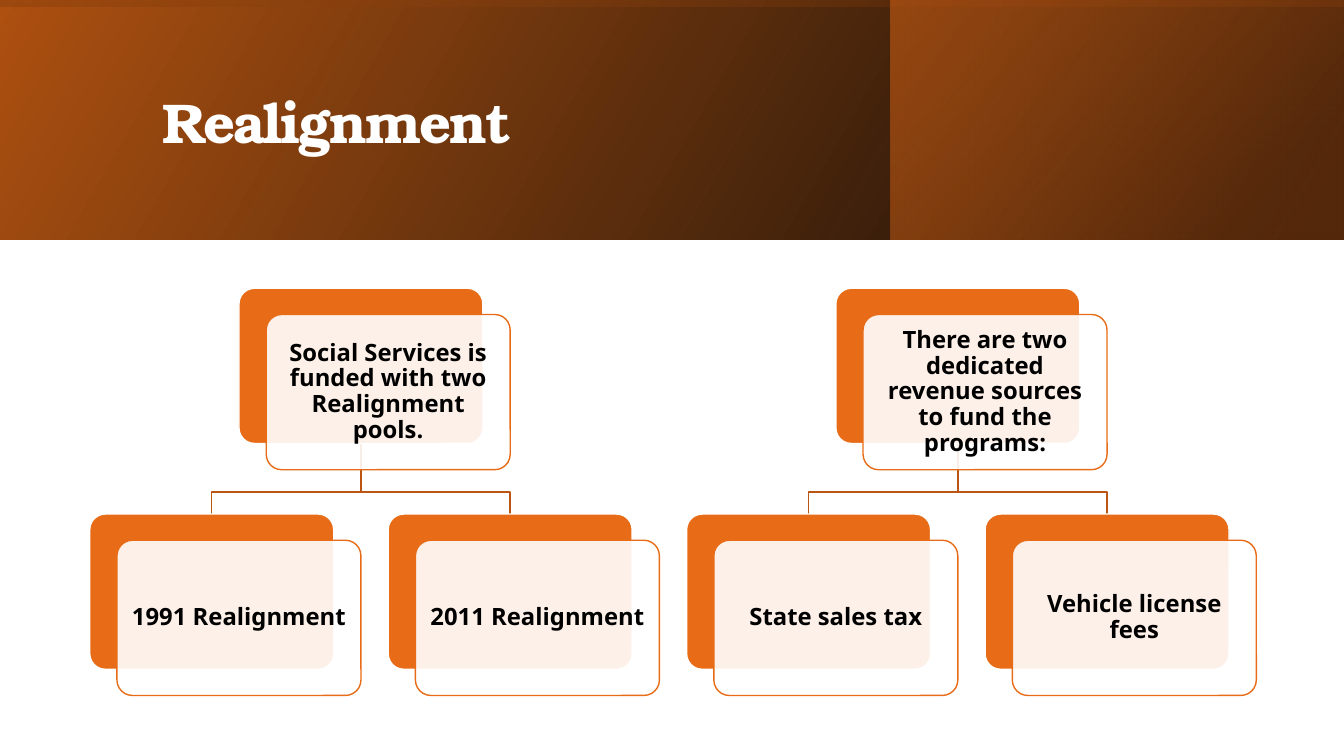
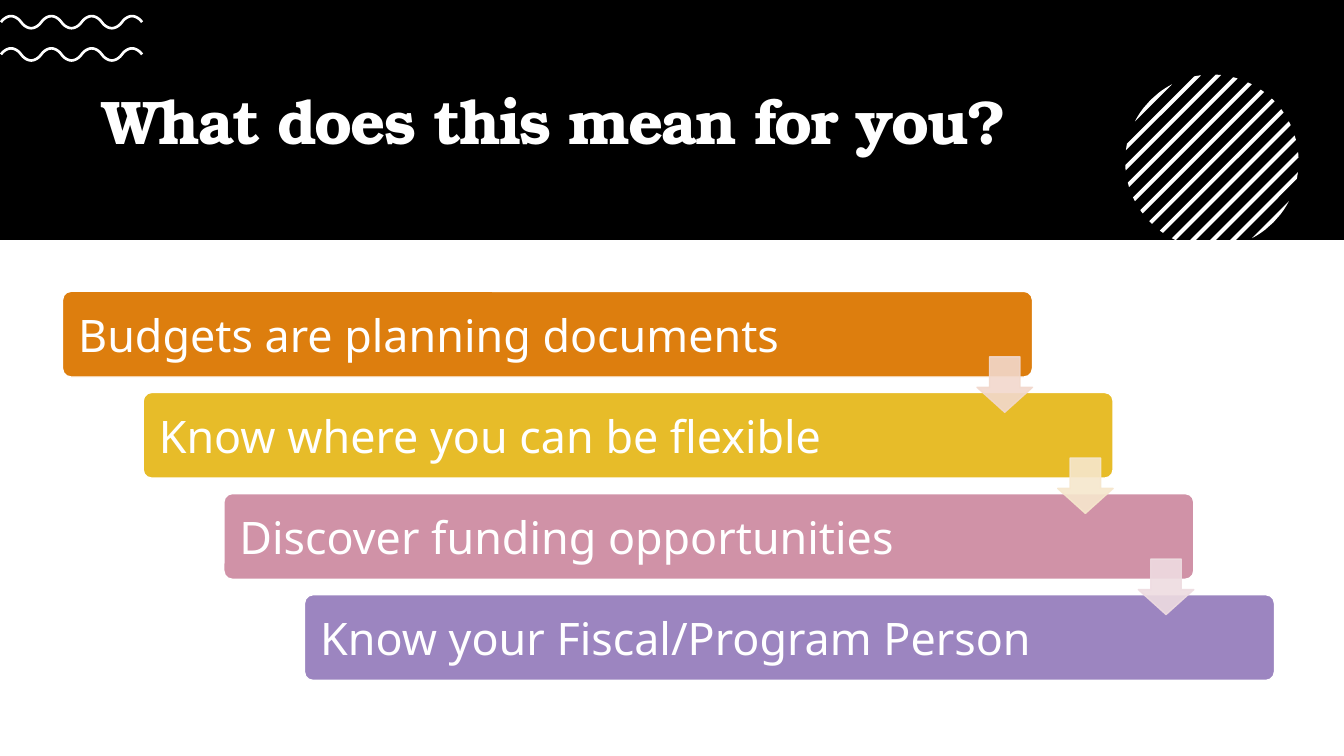
import math
from dataclasses import dataclass

from pptx import Presentation
from pptx.dml.color import RGBColor
from pptx.enum import shapes as es, text as et
from pptx.oxml.ns import qn
from pptx.util import Inches, Pt
from lxml import etree

COLORS = {
    "white": "FFFFFF", "black": "000000", "orange": "E86C17", "rust": "AE5111",
    "brown": "74360C", "branch": "BA5612", "amber": "DD7E0E", "gold": "E7BC29",
    "pink": "D092A7", "purple": "9C85C0", "peach": "F2D8CC", "cream": "F6E7CD",
    "blush": "EEDCE1",
}
TITLE_FONT, BODY_FONT = "TeX Gyre Bonum", "Noto Sans"
SLIDE_W, SLIDE_H, BAND_H = 13.33, 7.5, 2.38
RECT, ROUND = es.MSO_SHAPE.RECTANGLE, es.MSO_SHAPE.ROUNDED_RECTANGLE
CENTER, LEFT = et.PP_ALIGN.CENTER, et.PP_ALIGN.LEFT


@dataclass
class Box:
    x: float
    y: float
    w: float
    h: float

    def emu(self) -> list:
        return [Inches(v) for v in (self.x, self.y, self.w, self.h)]


@dataclass
class Stop:
    position: float
    color: str
    alpha: int = 100


@dataclass
class Panel:
    box: Box
    angle: int
    stops: tuple
    rotation: int = 0


@dataclass
class Tree:
    parent: str
    children: tuple


@dataclass
class Step:
    text: str
    color: str
    arrow: str = ""


PANELS = (
    Panel(Box(0, 0, SLIDE_W, BAND_H), 30, (Stop(0, "black", 96), Stop(1, "rust"))),
    Panel(Box(8.83, 0, 4.5, BAND_H), 40, (Stop(0.19, "brown", 68), Stop(1, "orange", 48))),
    Panel(Box(5.48, -5.48, 2.37, SLIDE_W), 10, (Stop(0.23, "rust", 16), Stop(0.99, "black", 45)), 270),
)
TREES = (
    Tree("Social Services is funded with two Realignment pools.",
         ("1991 Realignment", "2011 Realignment")),
    Tree("There are two dedicated revenue sources to fund the programs:",
         ("State sales tax", "Vehicle license fees")),
)
STEPS = (
    Step("Budgets are planning documents", "amber", "peach"),
    Step("Know where you can be flexible", "gold", "cream"),
    Step("Discover funding opportunities", "pink", "blush"),
    Step("Know your Fiscal/Program Person", "purple"),
)


# Shared helpers
def rgb(name: str) -> RGBColor:
    return RGBColor.from_string(COLORS[name])


def set_alpha(clr, percent: int) -> None:
    if percent < 100:
        etree.SubElement(clr, qn("a:alpha")).set("val", str(percent * 1000))


def paint(sp, fill: str = "", line: str = "", alpha: int = 100, line_alpha: int = 100,
          width: float = 1) -> None:
    sp.shadow.inherit = False
    props = sp._element.spPr
    if fill:
        sp.fill.solid()
        sp.fill.fore_color.rgb = rgb(fill)
        set_alpha(props.find(qn("a:solidFill"))[0], alpha)
    else:
        sp.fill.background()
    if line:
        sp.line.color.rgb = rgb(line)
        sp.line.width = Pt(width)
        set_alpha(props.find(qn("a:ln")).find(qn("a:solidFill"))[0], line_alpha)
    else:
        sp.line.fill.background()


def add_shape(slide, kind, box: Box, adjust: tuple = (), **style):
    sp = slide.shapes.add_shape(kind, *box.emu())
    for i, value in enumerate(adjust):
        sp.adjustments[i] = value
    paint(sp, **style)
    return sp


def write(sp, text: str, *, size: float, color: str, font: str = BODY_FONT, bold: bool = False,
          align=LEFT, inset: float = 0.1, inset_y: float = 0.05, leading: float = 1,
          tracking: int = 0) -> None:
    tf = sp.text_frame
    tf.word_wrap = True
    tf.auto_size = et.MSO_AUTO_SIZE.NONE
    tf.vertical_anchor = et.MSO_ANCHOR.MIDDLE
    tf.margin_left = tf.margin_right = Inches(inset)
    tf.margin_top = tf.margin_bottom = Inches(inset_y)
    p = tf.paragraphs[0]
    p.alignment, p.line_spacing = align, leading
    r = p.add_run()
    r.text = text
    r.font.name, r.font.size, r.font.bold = font, Pt(size), bold
    r.font.color.rgb = rgb(color)
    if tracking:
        r._r.get_or_add_rPr().set("spc", str(tracking))


def add_title(slide, text: str, box: Box, size: float) -> None:
    sp = slide.shapes.title
    sp.left, sp.top, sp.width, sp.height = box.emu()
    write(sp, text, size=size, color="white", font=TITLE_FONT, bold=True, leading=0.9, tracking=-150)
    slide.shapes._spTree.append(sp._element)  # in front of the band


def add_outline(slide, points: list, close: bool, **style) -> None:
    pts = [(Inches(x), Inches(y)) for x, y in points]
    builder = slide.shapes.build_freeform(*pts[0])
    builder.add_line_segments(pts[1:], close=close)
    paint(builder.convert_to_shape(), **style)


# Realignment slide
def add_panel(slide, panel: Panel) -> None:
    sp = add_shape(slide, RECT, panel.box)
    sp.rotation = panel.rotation
    sp._element.spPr.find(qn("a:xfrm")).set("flipH", "1")
    sp.fill.gradient()
    sp.fill.gradient_angle = panel.angle
    for target, stop in zip(sp.fill.gradient_stops, panel.stops):
        target.position = stop.position
        target.color.rgb = rgb(stop.color)
    for clr, stop in zip(sp._element.spPr.iter(qn("a:srgbClr")), panel.stops):
        set_alpha(clr, stop.alpha)


def add_trees(slide) -> None:
    card_w, card_h, pitch = 2.42, 1.54, 2.96
    shift_x, shift_y = 0.27, 0.26
    left, parent_y, bus_y, child_y = 0.89, 2.86, 4.88, 5.1

    def add_card(x: float, y: float, text: str) -> None:
        add_shape(slide, ROUND, Box(x, y, card_w, card_h), (0.1,), fill="orange", line="white")
        sp = add_shape(slide, ROUND, Box(x + shift_x, y + shift_y, card_w, card_h), (0.1,),
                       fill="white", line="orange", alpha=90)
        write(sp, text, size=17, color="black", bold=True, align=CENTER,
              inset=0.07, inset_y=0.07, leading=0.9)

    for i, tree in enumerate(TREES):
        xs = [left + (2 * i + j) * pitch for j in range(2)]
        parent_x = sum(xs) / 2
        mid = parent_x + card_w / 2
        for x in xs:
            child_mid = x + card_w / 2
            add_outline(slide, [(mid, parent_y + card_h), (mid, bus_y), (child_mid, bus_y),
                                (child_mid, child_y)], False, line="branch")
        add_card(parent_x, parent_y, tree.parent)
        for x, text in zip(xs, tree.children):
            add_card(x, child_y, text)


def realignment_slide(prs) -> None:
    slide = prs.slides.add_slide(prs.slide_layouts[5])
    for panel in PANELS:
        add_panel(slide, panel)
    add_title(slide, "Realignment", Box(1.51, 0.38, 10.63, 1.72), 40)
    add_trees(slide)


# Closing slide
def add_wave(slide, mid_y: float) -> None:
    start, period, count, height = 0.01, 0.4, 84, 0.06
    points = []
    for i in range(count + 1):
        turn = 3.5 * i / count
        swing = math.sin(2 * math.pi * turn)
        swing = math.copysign(abs(swing) ** 0.8, swing)  # rounder crests
        points.append((start + period * turn, mid_y - height * swing))
    add_outline(slide, points, False, line="white", width=1.9)


def add_striped_disc(slide) -> None:
    cx, cy, radius, pitch, half = 12.02, 1.6, 0.86, 0.14, 0.02
    unit = math.sqrt(0.5)
    for k in range(-6, 7):
        upper, lower = [], []
        for i in range(7):
            d = k * pitch + half * (i / 3 - 1)
            d = max(-radius, min(radius, d))
            chord = math.sqrt(radius ** 2 - d ** 2)
            x, y = cx + d * unit, cy + d * unit
            reach = min(chord * unit, BAND_H - y)  # cut off at the band's edge
            upper.append((x + chord * unit, y - chord * unit))
            lower.append((x - reach, y + reach))
        add_outline(slide, upper + lower[::-1], True, fill="white")


def add_steps(slide) -> None:
    w, h, x_pitch, arrow = 9.62, 0.85, 0.8, 0.55
    first_y, last_y = 2.89, 5.9
    y_pitch = (last_y - first_y) / (len(STEPS) - 1)
    spots = [(0.62 + i * x_pitch, first_y + i * y_pitch) for i in range(len(STEPS))]
    for step, (x, y) in zip(STEPS, spots):
        sp = add_shape(slide, ROUND, Box(x, y, w, h), (0.1,), fill=step.color, line="white")
        write(sp, step.text, size=32, color="white", inset=0.13)
    for step, (x, y) in zip(STEPS, spots):
        if step.arrow:
            add_shape(slide, es.MSO_SHAPE.DOWN_ARROW, Box(x + w - arrow, y + 0.65, arrow, arrow),
                      (0.55, 0.45), fill=step.arrow, line=step.arrow, alpha=90, line_alpha=90)


def closing_slide(prs) -> None:
    slide = prs.slides.add_slide(prs.slide_layouts[5])
    add_shape(slide, RECT, Box(0, 0, SLIDE_W, BAND_H), fill="black")
    add_title(slide, "What does this mean for you?", Box(0.92, 0.62, 11.5, 1.23), 44)
    for mid_y in (0.22, 0.54):
        add_wave(slide, mid_y)
    add_striped_disc(slide)
    add_steps(slide)


def main() -> None:
    prs = Presentation()
    prs.slide_width, prs.slide_height = Inches(SLIDE_W), Inches(SLIDE_H)
    realignment_slide(prs)
    closing_slide(prs)
    prs.save("out.pptx")


if __name__ == "__main__":
    main()
